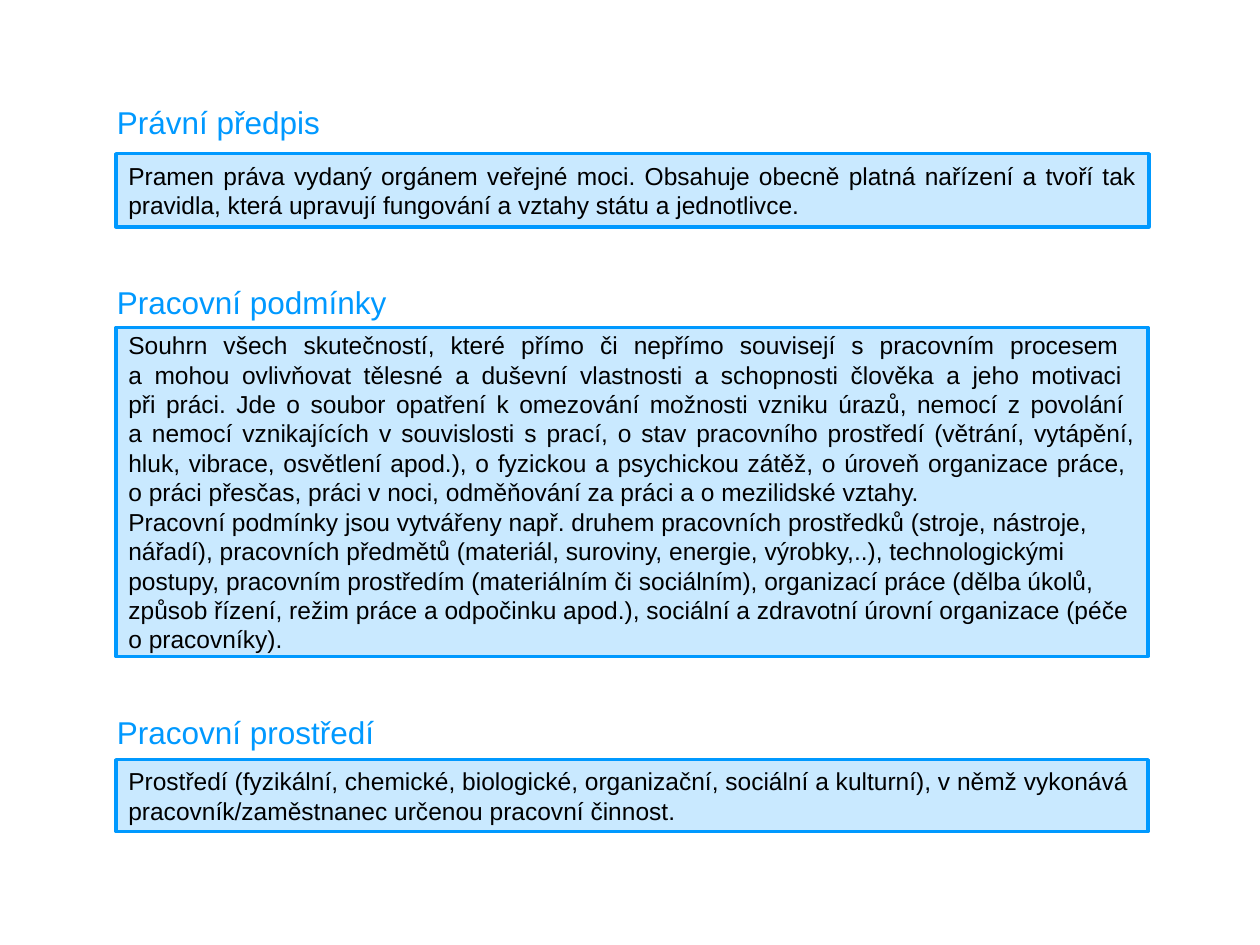
from pptx import Presentation
from pptx.dml.color import RGBColor
from pptx.enum.shapes import MSO_SHAPE
from pptx.enum.text import MSO_ANCHOR, MSO_AUTO_SIZE, PP_ALIGN
from pptx.util import Inches, Pt

BLUE = RGBColor(0x00, 0x99, 0xFF)
PALE_BLUE = RGBColor(0xC9, 0xE9, 0xFF)
BLACK = RGBColor(0, 0, 0)
WHITE = RGBColor(0xFF, 0xFF, 0xFF)
FONT = "Arial"
LEFT, JUSTIFY = PP_ALIGN.LEFT, PP_ALIGN.JUSTIFY

# Each term: heading (text, top, width), definition (top, width, height), paragraphs
TERMS = [
    (("Právní předpis", 0.77, 1.83), (1.22, 8.2, 0.58), [
        (JUSTIFY, "Pramen práva vydaný orgánem veřejné moci. Obsahuje obecně platná "
                  "nařízení a tvoří tak pravidla, která upravují fungování a vztahy "
                  "státu a jednotlivce."),
    ]),
    (("Pracovní podmínky", 2.2, 2.45), (2.6, 8.19, 2.61), [
        (JUSTIFY, "Souhrn všech skutečností, které přímo či nepřímo souvisejí s pracovním procesem \n"
                  "a mohou ovlivňovat tělesné a duševní vlastnosti a schopnosti člověka a jeho motivaci \n"
                  "při práci. Jde o soubor opatření k omezování možnosti vzniku úrazů, nemocí z povolání \n"
                  "a nemocí vznikajících v souvislosti s prací, o stav pracovního prostředí "
                  "(větrání, vytápění, hluk, vibrace, osvětlení apod.), o fyzickou a psychickou "
                  "zátěž, o úroveň organizace práce, \n"
                  "o práci přesčas, práci v noci, odměňování za práci a o mezilidské vztahy."),
        (LEFT, "Pracovní podmínky jsou vytvářeny např. druhem pracovních prostředků "
               "(stroje, nástroje, nářadí), pracovních předmětů (materiál, suroviny, energie, "
               "výrobky,..), technologickými postupy, pracovním prostředím (materiálním či "
               "sociálním), organizací práce (dělba úkolů, způsob řízení, režim práce a "
               "odpočinku apod.), sociální a zdravotní úrovní organizace (péče o pracovníky)."),
    ]),
    (("Pracovní prostředí", 5.61, 2.35), (6.03, 8.19, 0.57), [
        (LEFT, "Prostředí (fyzikální, chemické, biologické, organizační, sociální a kulturní), "
               "v němž vykonává pracovník/zaměstnanec určenou pracovní činnost."),
    ]),
]
HEADING_LEFT, HEADING_HEIGHT = 0.83, 0.4
DEFINITION_LEFT = 0.92


def add_block(slide, box, fill, paragraphs, size, color):
    block = slide.shapes.add_shape(MSO_SHAPE.RECTANGLE, *map(Inches, box))
    block.shadow.inherit = False
    block.fill.solid()
    block.fill.fore_color.rgb = fill
    block.line.fill.background()
    frame = block.text_frame
    for index, (align, text) in enumerate(paragraphs):
        paragraph = frame.add_paragraph() if index else frame.paragraphs[0]
        paragraph.text = text
        paragraph.alignment = align
        for run in paragraph.runs:
            run.font.name = FONT
            run.font.size = Pt(size)
            run.font.color.rgb = color
    return block


prs = Presentation()
prs.slide_width, prs.slide_height = Inches(10), Inches(7.5)
slide = prs.slides.add_slide(prs.slide_layouts[6])

for (title, title_top, title_width), (top, width, height), paragraphs in TERMS:
    # Heading
    heading = add_block(slide, (HEADING_LEFT, title_top, title_width, HEADING_HEIGHT),
                        WHITE, [(LEFT, title)], 18, BLUE)
    heading.text_frame.word_wrap = False
    heading.text_frame.auto_size = MSO_AUTO_SIZE.SHAPE_TO_FIT_TEXT
    heading.text_frame.vertical_anchor = MSO_ANCHOR.TOP

    # Framed definition
    definition = add_block(slide, (DEFINITION_LEFT, top, width, height),
                           PALE_BLUE, paragraphs, 14, BLACK)
    definition.line.color.rgb = BLUE
    definition.line.width = Pt(2)
    definition.text_frame.word_wrap = True
    definition.text_frame.vertical_anchor = MSO_ANCHOR.MIDDLE

prs.save("out.pptx")
